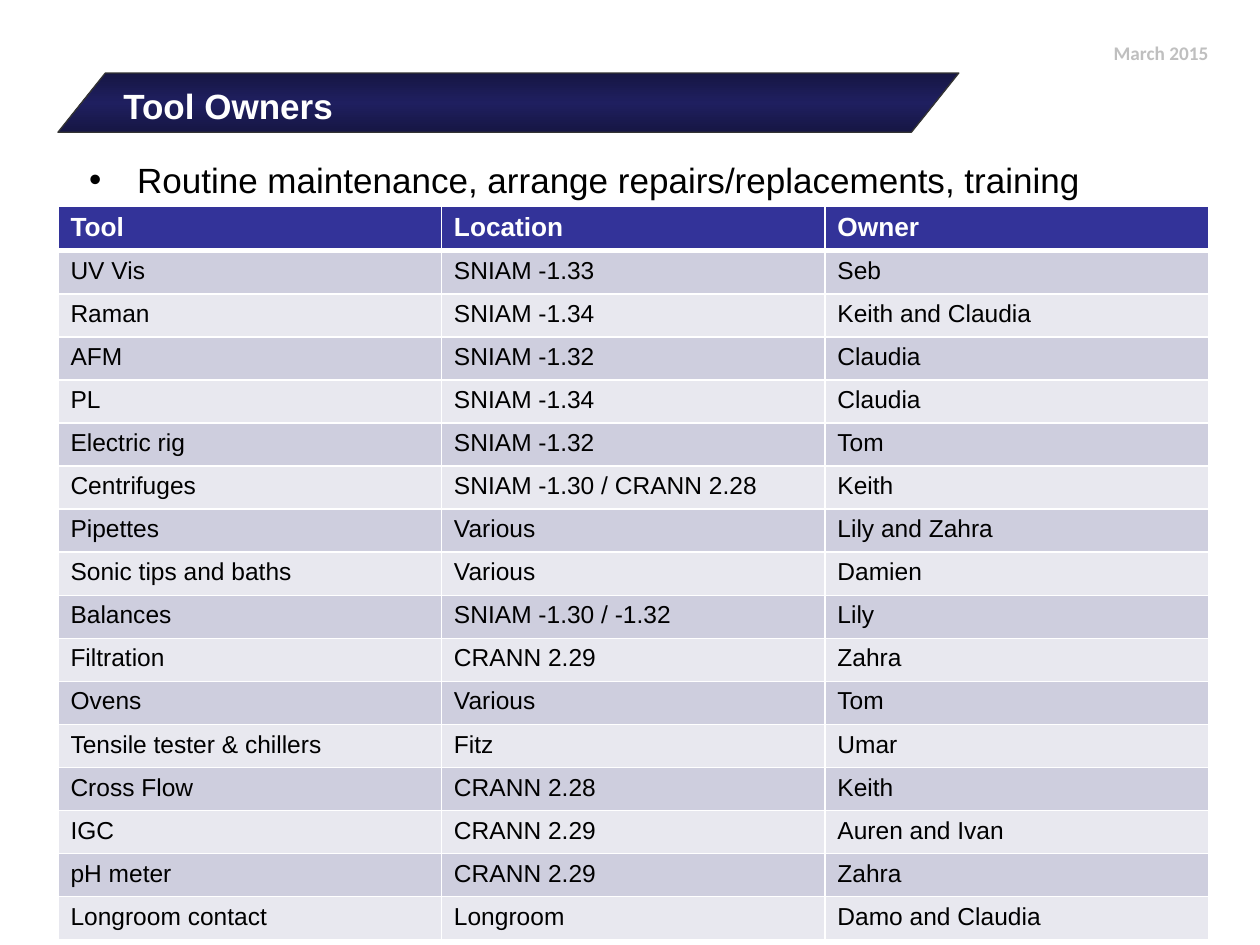
from copy import deepcopy
from dataclasses import dataclass

from lxml import etree
from pptx import Presentation
from pptx import util as u
from pptx.dml.color import RGBColor
from pptx.enum import shapes, text
from pptx.oxml import ns


@dataclass(frozen=True)
class Theme:
    font: str = "Arial"
    date_font: str = "Calibri"
    white: str = "FFFFFF"
    black: str = "000000"
    date_grey: str = "BFBFBF"
    banner_edge: str = "161644"
    banner_middle: str = "1F1F5F"
    banner_line: str = "333333"
    header_fill: str = "333399"
    bands: tuple = ("CECEDE", "E8E8EF")
    heading_size: int = 20
    header_size: int = 15
    body_size: int = 14
    date_size: int = 11
    border: int = 1
    header_border: int = 3


THEME = Theme()

TOOL_OWNERS = [
    ("Tool", "Location", "Owner"),
    ("UV Vis", "SNIAM -1.33", "Seb"),
    ("Raman", "SNIAM -1.34", "Keith and Claudia"),
    ("AFM", "SNIAM -1.32", "Claudia"),
    ("PL", "SNIAM -1.34", "Claudia"),
    ("Electric rig", "SNIAM -1.32", "Tom"),
    ("Centrifuges", "SNIAM -1.30 / CRANN 2.28", "Keith"),
    ("Pipettes", "Various", "Lily and Zahra"),
    ("Sonic tips and baths", "Various", "Damien"),
    ("Balances", "SNIAM -1.30 / -1.32", "Lily"),
    ("Filtration", "CRANN 2.29", "Zahra"),
    ("Ovens", "Various", "Tom"),
    ("Tensile tester & chillers", "Fitz", "Umar"),
    ("Cross Flow", "CRANN 2.28", "Keith"),
    ("IGC", "CRANN 2.29", "Auren and Ivan"),
    ("pH meter", "CRANN 2.29", "Zahra"),
    ("Longroom contact", "Longroom", "Damo and Claudia"),
]


def color(value):
    return RGBColor.from_string(value)


def write_text(paragraph, content, *, size, fill, font=THEME.font, bold=False):
    run = paragraph.add_run()
    run.text = content
    run.font.name = font
    run.font.size = u.Pt(size)
    run.font.bold = bold
    run.font.color.rgb = color(fill)


def add_text_box(slide, place, content, *, wrap=True, top_inset=0.05, **text_format):
    shape = slide.shapes.add_textbox(*map(u.Inches, place))
    frame = shape.text_frame
    frame.word_wrap = wrap
    frame.margin_top = u.Inches(top_inset)
    frame.vertical_anchor = text.MSO_ANCHOR.TOP
    paragraph = frame.paragraphs[0]
    write_text(paragraph, content, **text_format)
    return paragraph


def set_bullet(paragraph, indent):
    properties = paragraph._p.get_or_add_pPr()
    properties.set("marL", str(u.Inches(indent)))
    properties.set("indent", str(-u.Inches(indent)))
    etree.SubElement(properties, ns.qn("a:buFont"), typeface=THEME.font)
    etree.SubElement(properties, ns.qn("a:buChar"), char="•")


def add_banner(slide, place):
    shape = slide.shapes.add_shape(
        shapes.MSO_SHAPE.PARALLELOGRAM, *map(u.Inches, place))
    shape.adjustments[0] = 0.8
    shape.shadow.inherit = False
    shape.line.color.rgb = color(THEME.banner_line)
    shape.line.width = u.Pt(0.75)
    # Vertical gradient, lightest in the middle
    shape.fill.gradient()
    shape.fill.gradient_angle = 90
    for stop in shape.fill.gradient_stops:
        stop.color.rgb = color(THEME.banner_edge)
    first = shape._element.spPr.find(".//" + ns.qn("a:gs"))
    first.addnext(deepcopy(first))
    stops = shape.fill.gradient_stops
    stops[1].color.rgb = color(THEME.banner_middle)
    for stop, position in zip(stops, (0, 0.5, 1)):
        stop.position = position


def set_borders(cell, widths):
    properties = cell._tc.get_or_add_tcPr()
    for index, (side, width) in enumerate(widths.items()):
        line = etree.Element(ns.qn(f"a:ln{side}"), w=str(u.Pt(width)))
        fill = etree.SubElement(line, ns.qn("a:solidFill"))
        etree.SubElement(fill, ns.qn("a:srgbClr"), val=THEME.white)
        properties.insert(index, line)


def fill_cell(cell, content, row_index):
    header = row_index == 0
    cell.fill.solid()
    cell.fill.fore_color.rgb = color(
        THEME.header_fill if header else THEME.bands[(row_index - 1) % 2])
    write_text(
        cell.text_frame.paragraphs[0], content, bold=header,
        size=THEME.header_size if header else THEME.body_size,
        fill=THEME.white if header else THEME.black)
    # The thick line lies between the header and the first row
    set_borders(cell, {
        "L": THEME.border,
        "R": THEME.border,
        "T": THEME.header_border if row_index == 1 else THEME.border,
        "B": THEME.header_border if header else THEME.border,
    })


def add_table(slide, place, rows):
    table = slide.shapes.add_table(
        len(rows), len(rows[0]), *map(u.Inches, place)).table
    table.horz_banding = False
    for row_index, row in enumerate(rows):
        for column_index, content in enumerate(row):
            fill_cell(table.cell(row_index, column_index), content, row_index)


def main():
    presentation = Presentation()
    presentation.slide_width = u.Inches(10)
    presentation.slide_height = u.Inches(7.5)
    slide = presentation.slides.add_slide(presentation.slide_layouts[6])

    # Date
    add_text_box(slide, (8.74, 0.28, 0.96, 0.29), "March 2015", wrap=False,
                 size=THEME.date_size, fill=THEME.date_grey,
                 font=THEME.date_font, bold=True)

    # Title on its banner
    add_banner(slide, (0.46, 0.58, 7.15, 0.47))
    add_text_box(slide, (0.88, 0.6, 6.15, 0.51), "Tool Owners", top_inset=0.07,
                 size=THEME.heading_size, fill=THEME.white, bold=True)

    # Duties of an owner
    duties = add_text_box(
        slide, (0.61, 1.09, 9, 0.54),
        "Routine maintenance, arrange repairs/replacements, training",
        top_inset=0.07, size=THEME.heading_size, fill=THEME.black)
    set_bullet(duties, 0.38)
    duties.line_spacing = 1.3

    # Tools, locations and owners
    add_table(slide, (0.46, 1.64, 9.13, 5.81), TOOL_OWNERS)

    presentation.save("out.pptx")


if __name__ == "__main__":
    main()
